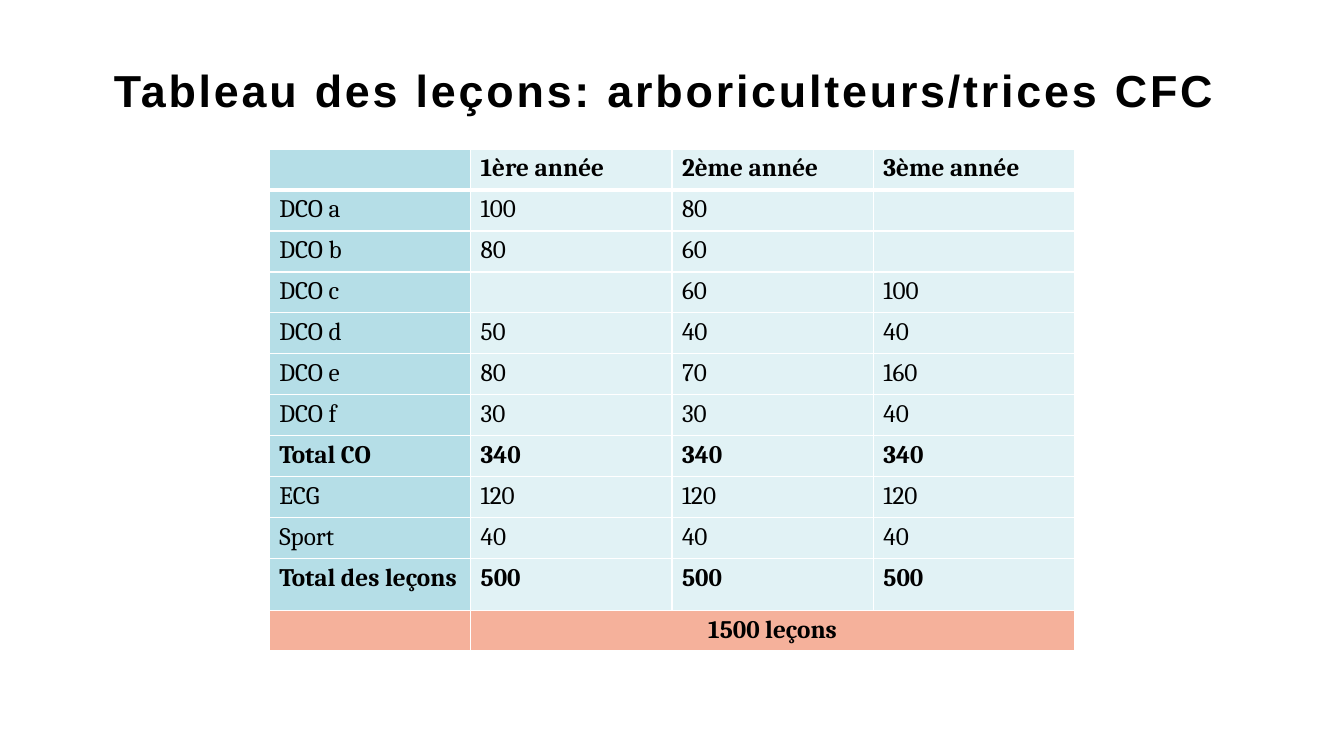
from lxml.etree import SubElement
from pptx import Presentation
from pptx.dml.color import RGBColor
from pptx.enum.text import MSO_ANCHOR, PP_ALIGN
from pptx.oxml.ns import qn
from pptx.util import Inches, Pt

LABEL_FILL, VALUE_FILL, SUM_FILL = "B5DEE7", "E1F2F5", "F5B19B"
WHITE, BLACK = "FFFFFF", "000000"

HEADER = ["", "1ère année", "2ème année", "3ème année"]
LESSONS = [
    ["DCO a", "100", "80", ""],
    ["DCO b", "80", "60", ""],
    ["DCO c", "", "60", "100"],
    ["DCO d", "50", "40", "40"],
    ["DCO e", "80", "70", "160"],
    ["DCO f", "30", "30", "40"],
    ["Total CO", "340", "340", "340"],
    ["ECG", "120", "120", "120"],
    ["Sport", "40", "40", "40"],
    ["Total des leçons", "500", "500", "500"],
]
GRAND_TOTAL = ["", "1500 leçons", "", ""]


def color(hex_value):
    return RGBColor.from_string(hex_value)


def add_run(paragraph, text, font_name, size, bold):
    run = paragraph.add_run()
    run.text = text
    run.font.name = font_name
    run.font.size = Pt(size)
    run.font.bold = bold
    run.font.color.rgb = color(BLACK)
    return run


def add_borders(cell, top=1, bottom=1):
    """Draw white lines around a cell, with widths in points."""
    properties = cell._tc.get_or_add_tcPr()
    for side, width in {"L": 1, "R": 1, "T": top, "B": bottom}.items():
        line = SubElement(properties, qn(f"a:ln{side}"), w=str(Pt(width)))
        fill = SubElement(line, qn("a:solidFill"))
        SubElement(fill, qn("a:srgbClr"), val=WHITE)


def add_title(slide, left, top, width, height):
    frame = slide.shapes.add_textbox(left, top, width, height).text_frame
    frame.word_wrap = True
    frame.vertical_anchor = MSO_ANCHOR.BOTTOM
    frame.margin_left = frame.margin_right = 0
    frame.margin_top = frame.margin_bottom = Inches(0.08)
    run = add_run(frame.paragraphs[0], "Tableau des leçons: arboriculteurs/trices CFC",
                  "Arial", 32, True)
    run.font._element.set("spc", "200")


def add_lesson_table(slide, left, top, width, height):
    rows = [HEADER, *LESSONS, GRAND_TOTAL]
    last = len(rows) - 1
    table = slide.shapes.add_table(len(rows), len(HEADER), left, top, width, height).table
    table.first_row = table.horz_banding = False

    for column in table.columns:
        column.width = width // len(HEADER)
    total_height, sum_height = Inches(0.52), Inches(0.39)
    for row in table.rows:
        row.height = (height - total_height - sum_height) // (last - 1)
    table.rows[last - 1].height = total_height
    table.rows[last].height = sum_height
    table.cell(last, 1).merge(table.cell(last, len(HEADER) - 1))

    for row_index, texts in enumerate(rows):
        bold = row_index in (0, last) or texts[0].startswith("Total")
        for column_index, text in enumerate(texts):
            cell = table.cell(row_index, column_index)
            add_borders(cell, top=3 if row_index == 1 else 1,
                        bottom=3 if row_index == 0 else 1)
            cell.fill.solid()
            base_fill = VALUE_FILL if column_index else LABEL_FILL
            cell.fill.fore_color.rgb = color(SUM_FILL if row_index == last else base_fill)
            if text:
                paragraph = cell.text_frame.paragraphs[0]
                paragraph.alignment = PP_ALIGN.CENTER if row_index == last else PP_ALIGN.LEFT
                add_run(paragraph, text, "Cambria", 18, bold)


def main():
    presentation = Presentation()
    presentation.slide_width = Inches(13.33)
    presentation.slide_height = Inches(7.5)
    slide = presentation.slides.add_slide(presentation.slide_layouts[6])
    add_title(slide, Inches(1.13), Inches(0.43), Inches(11.08), Inches(0.81))
    add_lesson_table(slide, Inches(2.67), Inches(1.48), Inches(7.99), Inches(4.97))
    presentation.save("out.pptx")


if __name__ == "__main__":
    main()
